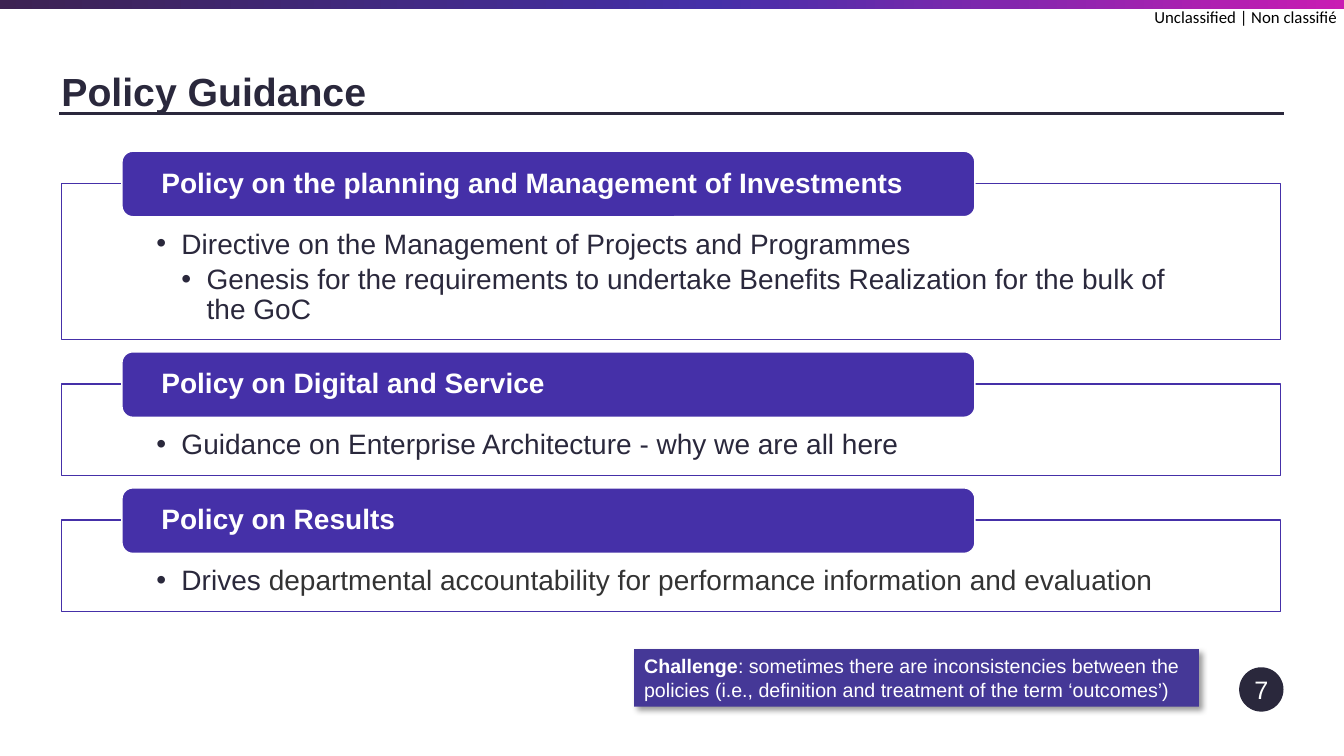
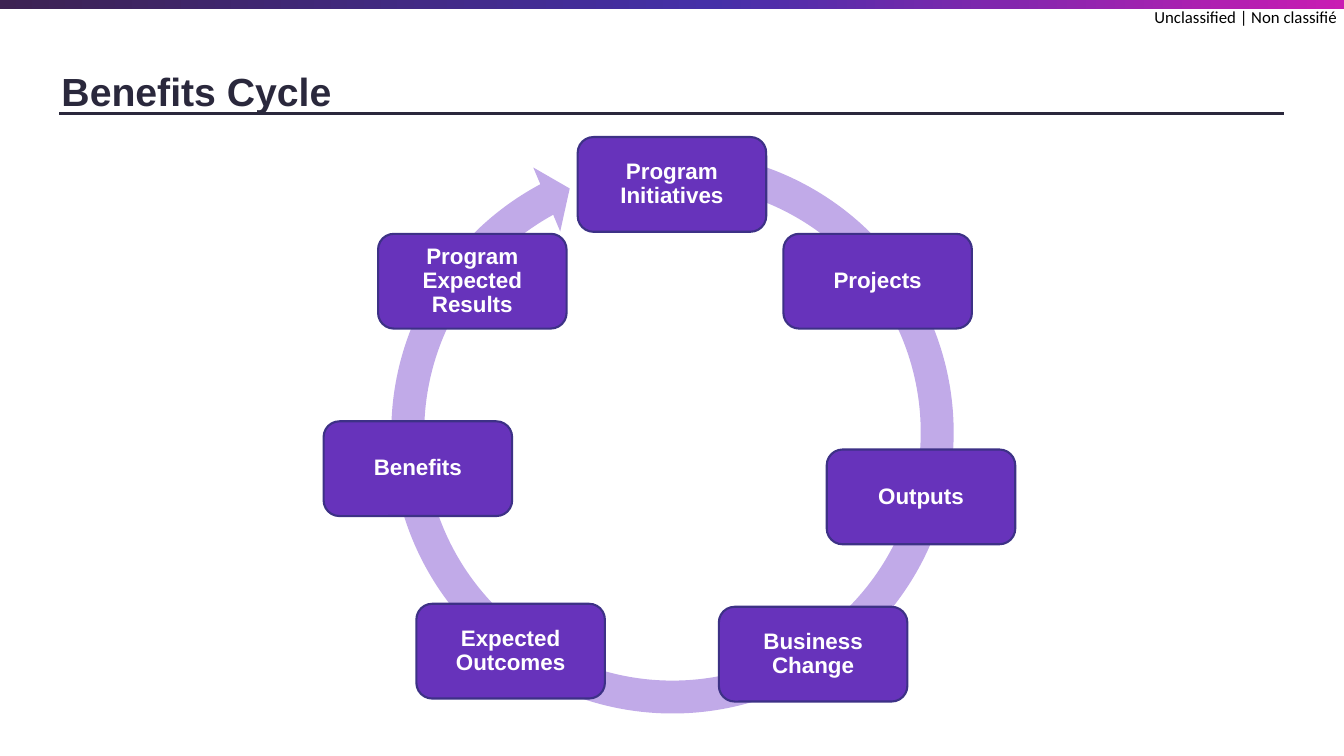
from copy import deepcopy
from dataclasses import dataclass
from typing import Any

from lxml.etree import SubElement as Sub
from pptx import Presentation
from pptx.dml.color import RGBColor
from pptx.enum.shapes import MSO_CONNECTOR as Link, MSO_SHAPE as Kind
from pptx.enum.text import MSO_ANCHOR as Anchor, MSO_AUTO_SIZE as Auto, PP_ALIGN as Align
from pptx.oxml.ns import qn
from pptx.slide import Slide
from pptx.util import Inches, Pt

INK = "2A283C"
WHITE = "FFFFFF"
BLACK = "000000"
VIOLET = "4530A8"
PURPLE = "6733BB"
EDGE = "3D3186"
LILAC = "C1AAE8"
NOTE = "453897"
GREY = "333333"
BAND = [(0, "3D2252"), (0.53, VIOLET), (1, "C91CB3")]

TITLE = {"size": Pt(28), "bold": True, "name": "Arial"}
HEAD = {"size": Pt(20), "bold": True, "name": "Arial"}
BODY = {"size": Pt(20), "bold": False, "name": "Arial"}
STEP = {"size": Pt(16), "bold": True, "name": "Arial"}
SMALL = {"size": Pt(14), "bold": False, "name": "Arial"}
STRONG = {**SMALL, "bold": True}
COUNT = {"size": Pt(18), "bold": False, "name": "Arial"}
LABEL = {"size": Pt(12), "bold": False, "name": "Calibri"}


@dataclass(frozen=True)
class Run:
    text: str
    form: dict[str, Any]
    ink: str


@dataclass(frozen=True)
class Card:
    head: str
    lines: list[list[Run]]
    height: float


@dataclass(frozen=True)
class Step:
    text: str
    left: float
    top: float


CARDS = [
    Card("Policy on the planning and Management of Investments", [
        [Run("Directive on the Management of Projects and Programmes", BODY, INK)],
        [Run("Genesis for the requirements to undertake Benefits Realization "
             "for the bulk of the GoC", BODY, INK)],
    ], 1.55),
    Card("Policy on Digital and Service", [
        [Run("Guidance on Enterprise Architecture - why we are all here", BODY, INK)],
    ], 0.91),
    Card("Policy on Results", [
        [Run("Drives ", BODY, INK),
         Run("departmental accountability for performance information and evaluation",
             BODY, GREY)],
    ], 0.91),
]

STEPS = [
    Step("Program Initiatives", 5.73, 1.36),
    Step("Projects", 7.77, 2.32),
    Step("Outputs", 8.2, 4.46),
    Step("Business Change", 7.13, 6.02),
    Step("Expected Outcomes", 4.13, 5.99),
    Step("Benefits", 3.21, 4.18),
    Step("Program Expected Results", 3.75, 2.32),
]


def tint(text: str) -> RGBColor:
    return RGBColor.from_string(text)


def apply(item: Any, form: dict[str, Any]) -> None:
    for key, value in form.items():
        setattr(item, key, value)


def place(shape: Any, left: float, top: float, width: float, height: float) -> None:
    apply(shape, {"left": Inches(left), "top": Inches(top),
                  "width": Inches(width), "height": Inches(height)})


def paint(shape: Any, fill: str, line: str = "", weight: float = 1) -> None:
    shape.fill.solid()
    shape.fill.fore_color.rgb = tint(fill)
    if line:
        shape.line.color.rgb = tint(line)
        shape.line.width = Pt(weight)
    else:
        shape.line.fill.background()


def add_box(slide: Slide, kind: Any, spot: tuple[float, float, float, float],
            fill: str, line: str = "", weight: float = 1) -> Any:
    box = slide.shapes.add_shape(kind, *map(Inches, spot))
    box.shadow.inherit = False
    paint(box, fill, line, weight)
    return box


def write(shape: Any, lines: list[list[Run]], pad: tuple[float, float, float, float],
          form: dict[str, Any], anchor: Any = Anchor.MIDDLE) -> None:
    frame = shape.text_frame
    sides = ("margin_left", "margin_top", "margin_right", "margin_bottom")
    apply(frame, dict(zip(sides, map(Inches, pad))))
    apply(frame, {"word_wrap": True, "auto_size": Auto.NONE, "vertical_anchor": anchor})
    for index, runs in enumerate(lines):
        para = frame.add_paragraph() if index else frame.paragraphs[0]
        apply(para, {"alignment": Align.LEFT, "space_before": Pt(0), **form})
        for part in runs:
            run = para.add_run()
            run.text = part.text
            apply(run.font, part.form)
            run.font.color.rgb = tint(part.ink)


def add_dots(shape: Any) -> None:
    for level, para in enumerate(shape.text_frame.paragraphs):
        para.level = level
        props = para._p.get_or_add_pPr()
        props.set("marL", str(Inches(0.25 * (level + 1))))
        props.set("indent", str(Inches(-0.25)))
        Sub(props, qn("a:buFont"), typeface="Arial")
        Sub(props, qn("a:buChar"), char="•")


def add_shade(shape: Any) -> None:
    group = shape.element.spPr.find(qn("a:effectLst"))
    shade = Sub(group, qn("a:outerShdw"), blurRad=str(Pt(4)), dist=str(Pt(3)),
                dir="2700000", algn="tl", rotWithShape="0")
    color = Sub(shade, qn("a:srgbClr"), val=BLACK)
    Sub(color, qn("a:alpha"), val="40000")


def add_frame(deck: Any, slide: Slide) -> None:
    band = add_box(slide, Kind.RECTANGLE, (-0.01, 0, 13.35, 0.09), VIOLET)
    band.fill.gradient()
    band.fill.gradient_angle = 0
    stops = band.element.spPr.find(".//" + qn("a:gsLst"))
    stops.append(deepcopy(stops[0]))
    for stop, (spot, color) in zip(band.fill.gradient_stops, BAND):
        stop.position = spot
        stop.color.rgb = tint(color)

    label = slide.shapes.add_textbox(*map(Inches, (11.45, 0.07, 1.86, 0.2)))
    write(label, [[Run("Unclassified | Non classifié", LABEL, BLACK)]],
          (0, 0, 0, 0), {}, Anchor.TOP)

    rule = slide.shapes.add_connector(
        Link.STRAIGHT, *map(Inches, (0.59, 1.13, 12.74, 1.13)))
    rule.line.color.rgb = tint(INK)
    rule.line.width = Pt(2.25)
    Sub(rule.element.spPr, qn("a:effectLst"))

    for number, shape in enumerate((band, label, rule), 20):
        shape.element.xpath(".//p:cNvPr")[0].set("id", str(number))
        deck.slide_master.shapes.element.append(shape.element)


def add_slide(deck: Any, layout: int, title: str, width: float) -> Slide:
    slide = deck.slides.add_slide(deck.slide_layouts[layout])
    head = slide.shapes.title
    place(head, 0.61, 0.57, width, 0.55)
    write(head, [[Run(title, TITLE, INK)]], (0, 0, 0, 0),
          {"line_spacing": 1.2}, Anchor.TOP)
    return slide


def add_cards(slide: Slide) -> None:
    holders = list(slide.placeholders)[1:]
    top = 1.82
    for card, body in zip(CARDS, holders):
        place(body, 0.61, top, 12.09, card.height)
        paint(body, WHITE, VIOLET)
        write(body, card.lines, (0.94, 0.46, 0.94, 0.16),
              {"line_spacing": 0.9, "space_after": Pt(3.6)}, Anchor.TOP)
        add_dots(body)
        tab = add_box(slide, Kind.ROUNDED_RECTANGLE,
                      (1.21, top - 0.32, 8.46, 0.65), VIOLET, WHITE)
        write(tab, [[Run(card.head, HEAD, WHITE)]], (0.36, 0, 0.36, 0),
              {"line_spacing": 0.9})
        top += card.height + 0.44
    for spare in holders[len(CARDS):]:
        spare.element.getparent().remove(spare.element)


def add_notes(slide: Slide) -> None:
    badge = add_box(slide, Kind.OVAL, (12.29, 6.62, 0.44, 0.44), INK)
    write(badge, [[Run("7", COUNT, WHITE)]], (0, 0, 0, 0), {"alignment": Align.CENTER})
    note = add_box(slide, Kind.RECTANGLE, (6.29, 6.44, 5.6, 0.57), NOTE)
    add_shade(note)
    write(note, [[
        Run("Challenge", STRONG, WHITE),
        Run(": sometimes there are inconsistencies between the policies "
            "(i.e., definition and treatment of the term ‘outcomes’)", SMALL, WHITE),
    ]], (0.1, 0.05, 0.1, 0.05), {}, Anchor.TOP)


def add_cycle(slide: Slide) -> None:
    ring = add_box(slide, Kind.CIRCULAR_ARROW, (3.7, 1.32, 5.94, 5.94), LILAC)
    for index, value in enumerate((0.055, 3.307, 144.99, 169.599, 0.058)):
        ring.adjustments[index] = value
    for step in STEPS:
        box = add_box(slide, Kind.ROUNDED_RECTANGLE,
                      (step.left, step.top, 1.87, 0.94), PURPLE, EDGE, 1.5)
        write(box, [[Run(step.text, STEP, WHITE)]], (0.11, 0.11, 0.11, 0.11),
              {"alignment": Align.CENTER, "line_spacing": 0.9})


def main() -> None:
    deck = Presentation()
    apply(deck, {"slide_width": Inches(13.33), "slide_height": Inches(7.5)})
    policy = add_slide(deck, 4, "Policy Guidance", 5.76)
    add_frame(deck, policy)
    add_cards(policy)
    add_notes(policy)
    cycle = add_slide(deck, 5, "Benefits Cycle", 7.49)
    add_cycle(cycle)
    deck.save("out.pptx")


if __name__ == "__main__":
    main()
